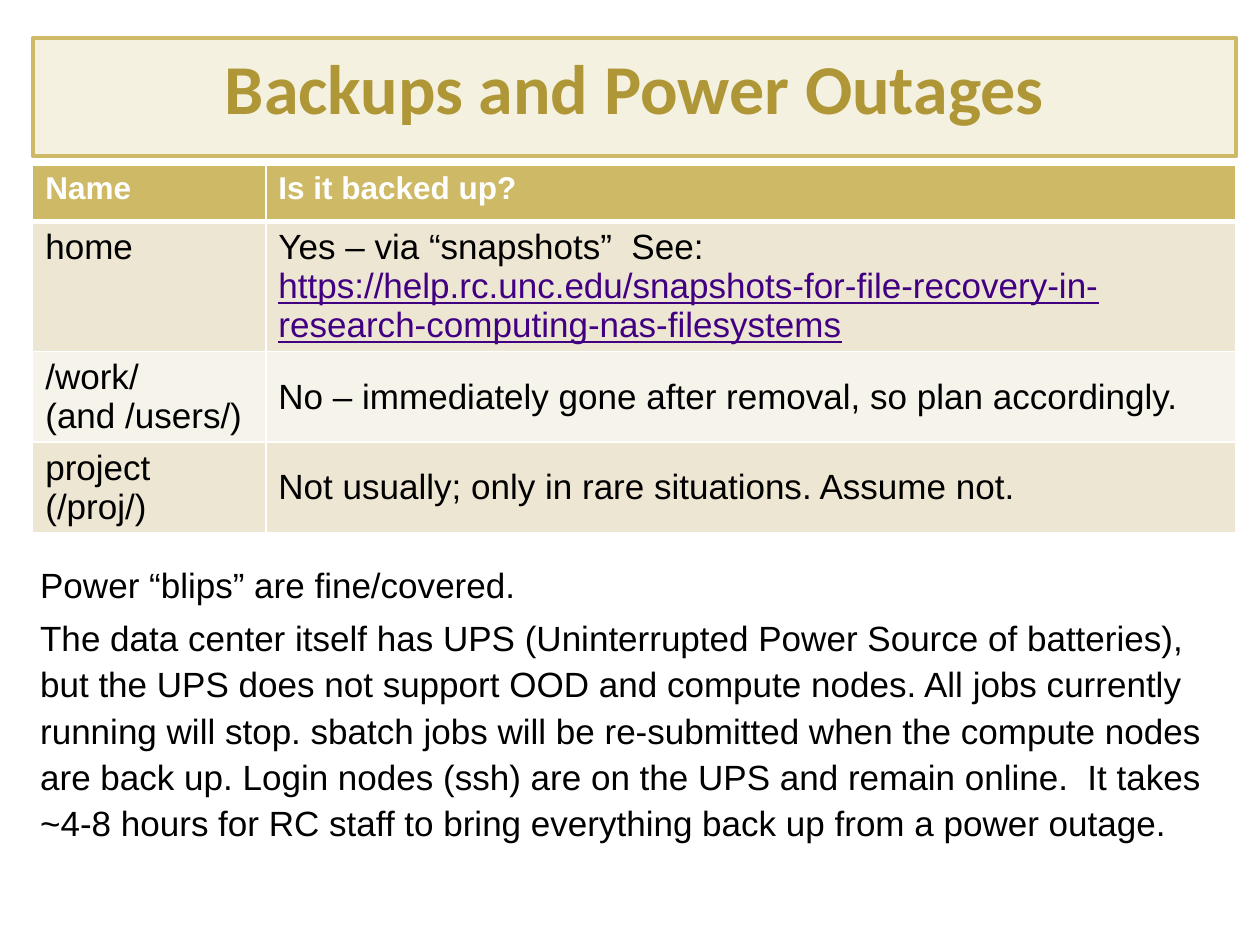
from lxml import etree
from pptx import Presentation
from pptx.dml.color import RGBColor
from pptx.enum.text import MSO_ANCHOR, PP_ALIGN
from pptx.oxml.ns import qn
from pptx.util import Inches, Pt

CENTER = PP_ALIGN.CENTER
TOP, MIDDLE = MSO_ANCHOR.TOP, MSO_ANCHOR.MIDDLE
TITLE_ONLY = 5

GOLD, DARK_GOLD, CREAM = "CEB966", "AF9738", "F5F1E0"
BAND, LIGHT_BAND = "EDE6D3", "F6F3EA"
BLACK, WHITE, LINK = "000000", "FFFFFF", "410082"


def color(value):
    return RGBColor.from_string(value)


def set_border(cell, side, width):
    """Draw one white cell edge; side is L, R, T or B."""
    line = etree.SubElement(cell._tc.get_or_add_tcPr(), qn(f"a:ln{side}"), w=str(Pt(width)))
    fill = etree.SubElement(line, qn("a:solidFill"))
    etree.SubElement(fill, qn("a:srgbClr"), val=WHITE)


class SlideBuilder:
    font = "Arial"
    title_font = "Calibri"

    def __init__(self, slide):
        self.slide = slide

    def add_run(self, paragraph, text, size, fill=BLACK, bold=False, name=None):
        run = paragraph.add_run()
        run.text = text
        run.font.name = name or self.font
        run.font.size = Pt(size)
        run.font.bold = bold
        run.font.color.rgb = color(fill)
        return run

    def add_title(self, text, left, top, width, height):
        title = self.slide.shapes.title
        title.left, title.top = Inches(left), Inches(top)
        title.width, title.height = Inches(width), Inches(height)
        title.fill.solid()
        title.fill.fore_color.rgb = color(CREAM)
        title.line.color.rgb = color(GOLD)
        title.line.width = Pt(2.25)
        frame = title.text_frame
        frame.vertical_anchor = TOP
        paragraph = frame.paragraphs[0]
        paragraph.alignment = CENTER
        self.add_run(paragraph, text, 40, DARK_GOLD, True, self.title_font)

    def fill_cell(self, cell, lines, fill, anchor, header):
        cell.fill.solid()
        cell.vertical_anchor = anchor
        frame = cell.text_frame
        for index, text in enumerate(lines):
            paragraph = frame.add_paragraph() if index else frame.paragraphs[0]
            if header:
                self.add_run(paragraph, text, 18, WHITE, True)
            elif text.startswith("https:"):
                self.add_run(paragraph, text, 20, LINK).font.underline = True
            else:
                self.add_run(paragraph, text, 20)
        cell.fill.fore_color.rgb = color(fill)

    def add_table(self, rows, left, top, widths, heights):
        """Each row is a fill, an anchor and a list of lines for each cell."""
        frame = self.slide.shapes.add_table(
            len(rows), len(widths), Inches(left), Inches(top),
            Inches(sum(widths)), Inches(sum(heights)))
        table = frame.table
        for column, width in zip(table.columns, widths):
            column.width = Inches(width)
        for row_index, (fill, anchor, cells) in enumerate(rows):
            table.rows[row_index].height = Inches(heights[row_index])
            for column_index, lines in enumerate(cells):
                cell = table.cell(row_index, column_index)
                for side in "LRTB":
                    below_header = (row_index, side) in ((0, "B"), (1, "T"))
                    set_border(cell, side, 3 if below_header else 1)
                self.fill_cell(cell, lines, fill, anchor, row_index == 0)

    def add_text(self, paragraphs, left, top, width, height):
        box = self.slide.shapes.add_textbox(
            Inches(left), Inches(top), Inches(width), Inches(height))
        frame = box.text_frame
        frame.word_wrap = True
        for index, text in enumerate(paragraphs):
            paragraph = frame.add_paragraph() if index else frame.paragraphs[0]
            paragraph.line_spacing = 1.1
            paragraph.space_before = Pt(4 if index else 0)
            self.add_run(paragraph, text, 20)


ROWS = [
    (GOLD, TOP, [["Name"], ["Is it backed up?"]]),
    (BAND, TOP, [["home"], [
        "Yes – via “snapshots”  See:",
        "https://help.rc.unc.edu/snapshots-for-file-recovery-in-"
        "research-computing-nas-filesystems"]]),
    (LIGHT_BAND, MIDDLE, [["/work/", "(and /users/)"], [
        "No – immediately gone after removal, so plan accordingly."]]),
    (BAND, MIDDLE, [["project (/proj/)"], [
        "Not usually; only in rare situations. Assume not."]]),
]

POWER_NOTES = [
    "Power “blips” are fine/covered.",
    "The data center itself has UPS (Uninterrupted Power Source of batteries), "
    "but the UPS does not support OOD and compute nodes. All jobs currently "
    "running will stop. sbatch jobs will be re-submitted when the compute nodes "
    "are back up. Login nodes (ssh) are on the UPS and remain online.  It takes "
    "~4-8 hours for RC staff to bring everything back up from a power outage.",
]


def main():
    presentation = Presentation()
    presentation.slide_width = Inches(10)
    presentation.slide_height = Inches(7.5)
    slide = presentation.slides.add_slide(presentation.slide_layouts[TITLE_ONLY])
    builder = SlideBuilder(slide)
    builder.add_title("Backups and Power Outages", 0.26, 0.3, 9.55, 0.94)
    builder.add_table(ROWS, 0.26, 1.31, [1.85, 7.7], [0.45, 1, 0.58, 0.52])
    builder.add_text(POWER_NOTES, 0.22, 4.39, 9.55, 2.15)
    presentation.save("out.pptx")


if __name__ == "__main__":
    main()
